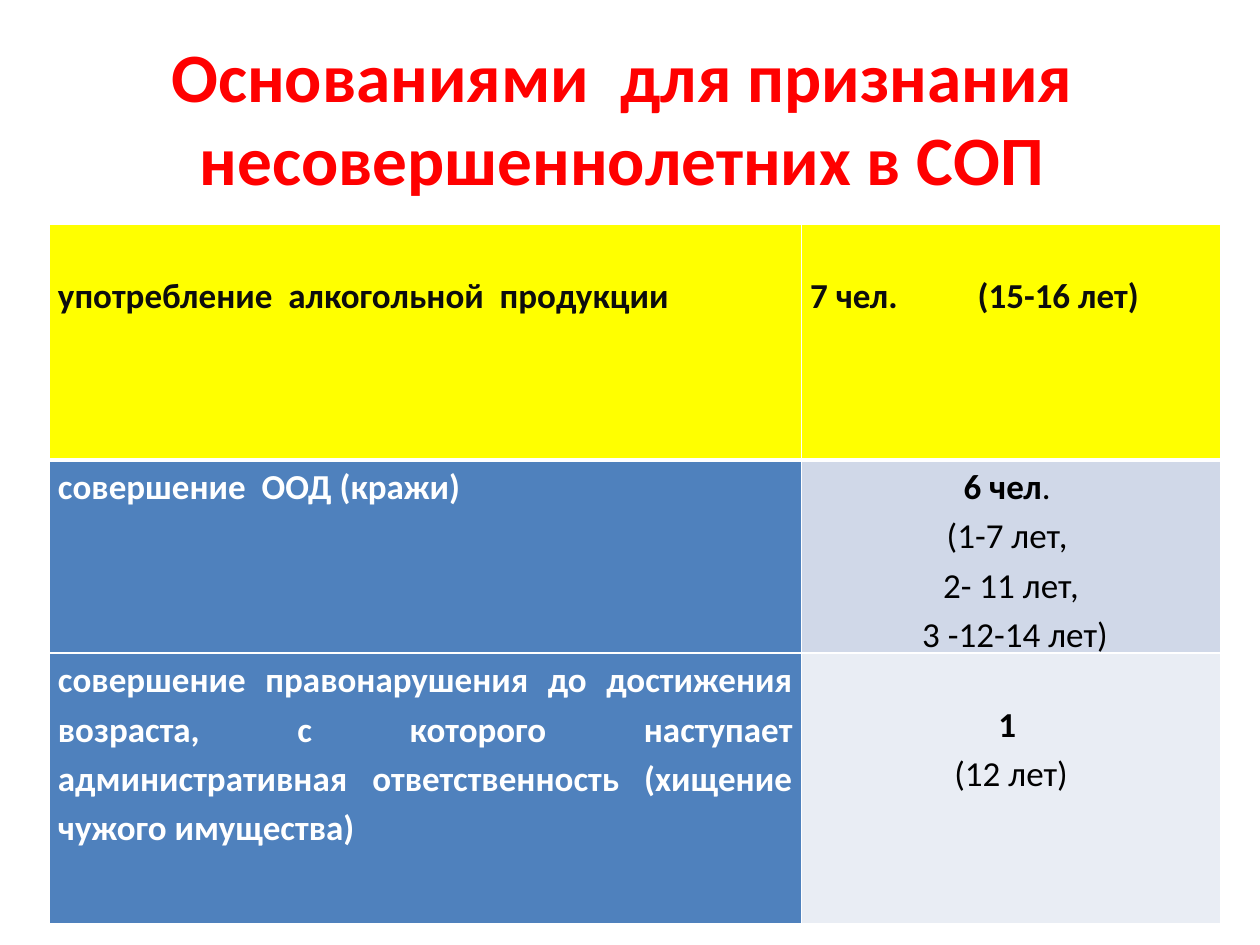
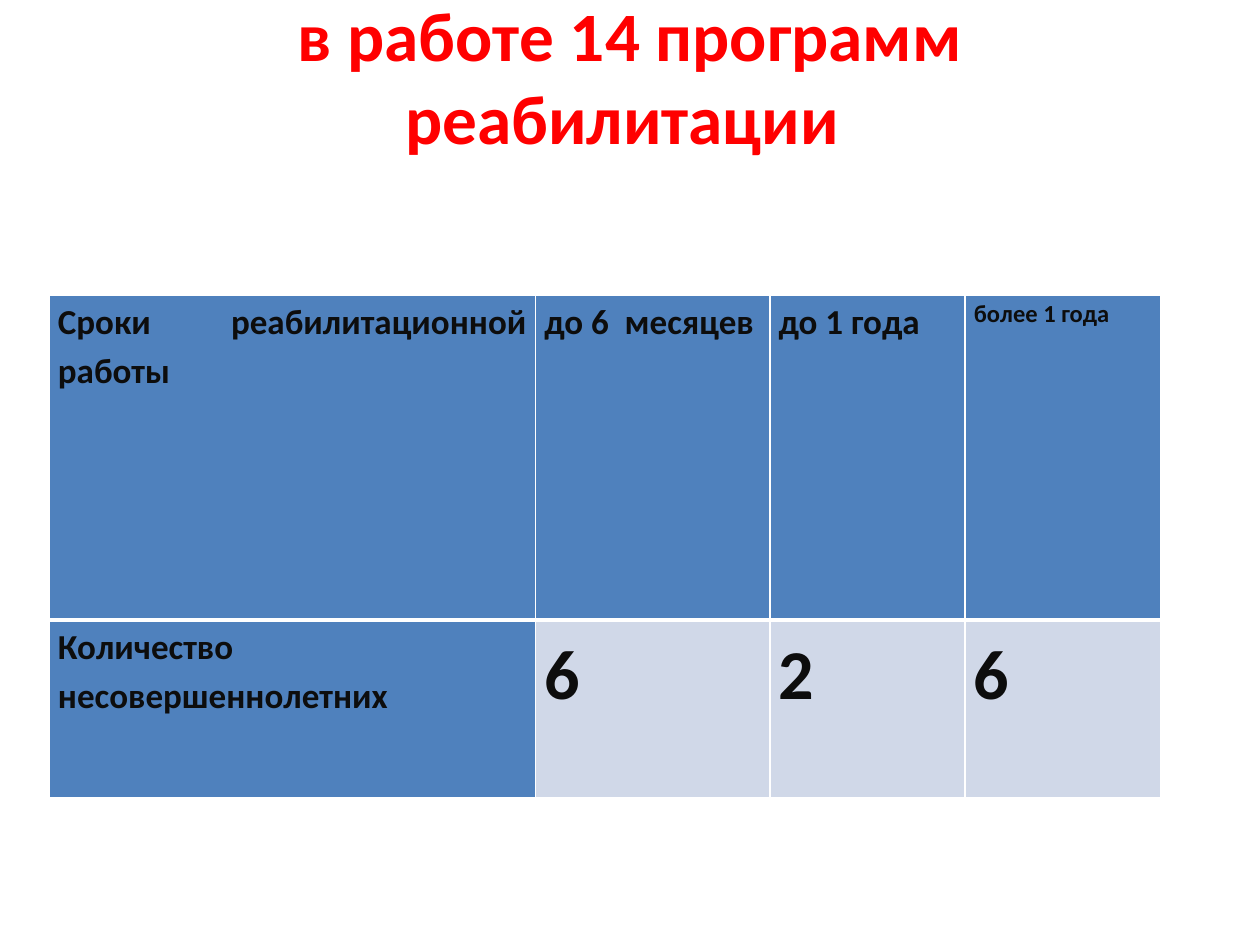
"""Build two slides on minors in a socially dangerous situation and their rehabilitation."""
import pptx
import pptx.dml.color
import pptx.enum.text
import pptx.util
import lxml.etree
from pptx.oxml.ns import qn

Inches = pptx.util.Inches
Pt = pptx.util.Pt
ALIGN = pptx.enum.text.PP_ALIGN
FONT = "Calibri"
COLORS = {
    "title": "FF0000", "dark": "0D0D0D", "black": "000000", "white": "FFFFFF",
    "yellow": "FFFF00", "blue": "4F81BD", "pale": "D0D8E8", "paler": "E9EDF4",
}


def rgb(name):
    return pptx.dml.color.RGBColor.from_string(COLORS[name])


def add_border(cell, side, width):
    line = lxml.etree.SubElement(cell._tc.get_or_add_tcPr(), qn("a:" + side), w=str(Pt(width)))
    fill = lxml.etree.SubElement(line, qn("a:solidFill"))
    lxml.etree.SubElement(fill, qn("a:srgbClr"), val=COLORS["white"])


reasons = [
    [dict(lines=["употребление  алкогольной  продукции"], fill="yellow", top=0.35),
     dict(lines=["7 чел.\t(15-16 лет)"], fill="yellow", top=0.35, align=ALIGN.LEFT, tab=1.33)],
    [dict(lines=["совершение  ООД (кражи)"], fill="blue", color="white"),
     dict(lines=["6 чел", "(1-7 лет, ", "2- 11 лет,", " 3 -12-14 лет)"], tail=". ",
          fill="pale", color="black", align=ALIGN.CENTER)],
    [dict(lines=["совершение правонарушения до достижения возраста, с которого наступает "
                 "административная ответственность (хищение чужого имущества)"],
          fill="blue", color="white"),
     dict(lines=["1 ", "(12 лет)"], fill="paler", color="black", top=0.35, align=ALIGN.CENTER)],
]
terms = [
    [dict(lines=["Сроки реабилитационной работы"], fill="blue"),
     dict(lines=["до 6  месяцев"], fill="blue"),
     dict(lines=["до 1 года"], fill="blue"),
     dict(lines=["более 1 года"], fill="blue", size=14)],
    [dict(lines=["Количество несовершеннолетних"], fill="blue")]
    + [dict(lines=[count], fill="pale", size=40) for count in ("6", "2", "6")],
]
slides = [
    dict(title="Основаниями  для признания  несовершеннолетних в СОП ", title_bottom=0.05,
         top=1.78, widths=[5.97, 3.33], heights=[1.87, 1.07, 2.15], cells=reasons),
    dict(title="в работе 14 программ\vреабилитации ", title_bottom=0.71,
         top=2.34, widths=[3.86, 1.86, 1.55, 1.55], heights=[2.58, 1.41], cells=terms),
]

deck = pptx.Presentation()
deck.slide_width, deck.slide_height = Inches(10), Inches(7.5)

for content in slides:
    page = deck.slides.add_slide(deck.slide_layouts[6])

    box = page.shapes.add_textbox(Inches(0.5), Inches(0.3), Inches(9), Inches(1.25))
    frame = box.text_frame
    frame.word_wrap = True
    frame.vertical_anchor = pptx.enum.text.MSO_ANCHOR.MIDDLE
    frame.margin_bottom = Inches(content["title_bottom"])
    frame.text = content["title"]
    para = frame.paragraphs[0]
    para.alignment = ALIGN.CENTER
    para.font.name, para.font.size, para.font.bold = FONT, Pt(39.6), True
    para.font.color.rgb = rgb("title")

    widths, heights = content["widths"], content["heights"]
    table = page.shapes.add_table(
        len(heights), len(widths), Inches(0.39), Inches(content["top"]),
        Inches(sum(widths)), Inches(sum(heights))).table
    for column, width in zip(table.columns, widths):
        column.width = Inches(width)
    for row, height in zip(table.rows, heights):
        row.height = Inches(height)

    for row_index, row_cells in enumerate(content["cells"]):
        for column_index, entry in enumerate(row_cells):
            cell = table.cell(row_index, column_index)
            cell.margin_left = cell.margin_right = Inches(0.07)
            cell.margin_top, cell.margin_bottom = Inches(entry.get("top", 0)), 0
            add_border(cell, "lnL", 1)
            add_border(cell, "lnR", 1)
            add_border(cell, "lnT", 3 if row_index == 1 else 1)
            add_border(cell, "lnB", 3 if row_index == 0 else 1)
            cell.fill.solid()
            cell.fill.fore_color.rgb = rgb(entry["fill"])

            cell.text = "\n".join(entry["lines"])
            for number, para in enumerate(cell.text_frame.paragraphs):
                para.alignment = entry.get("align", ALIGN.JUSTIFY)
                para.line_spacing = 1.15
                para.font.name, para.font.size = FONT, Pt(entry.get("size", 20))
                para.font.bold = number == 0
                para.font.color.rgb = rgb(entry.get("color", "dark"))
                if "tab" in entry:
                    stops = lxml.etree.Element(qn("a:tabLst"))
                    lxml.etree.SubElement(stops, qn("a:tab"), pos=str(Inches(entry["tab"])), algn="l")
                    para._p.get_or_add_pPr().find(qn("a:defRPr")).addprevious(stops)
            if "tail" in entry:
                span = cell.text_frame.paragraphs[0].add_run()
                span.text = entry["tail"]
                span.font.bold = False

deck.save("out.pptx")
